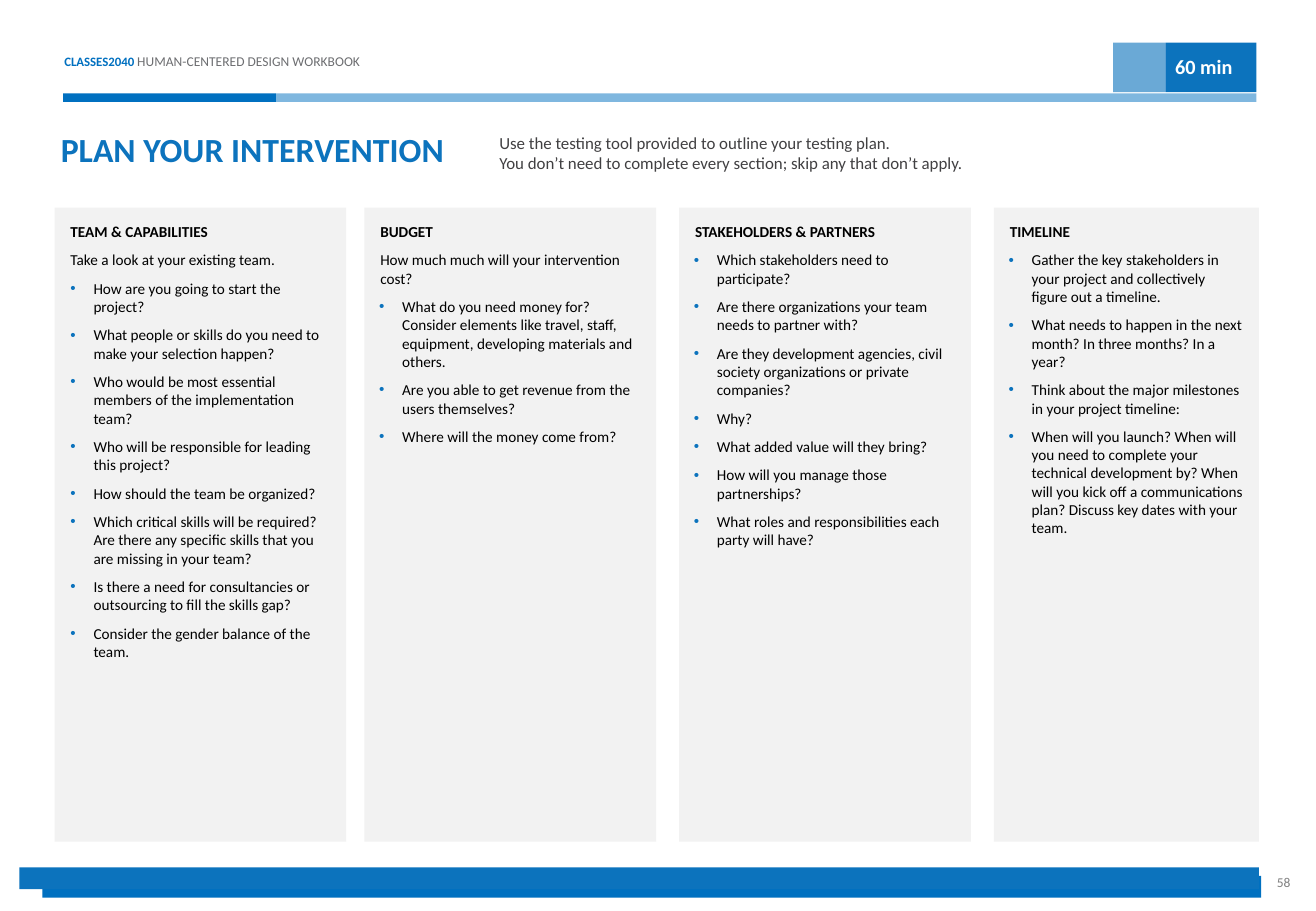
from dataclasses import dataclass

from lxml import etree
from pptx import Presentation
from pptx.dml.color import RGBColor
from pptx.enum.shapes import MSO_SHAPE
from pptx.enum.text import MSO_ANCHOR, PP_ALIGN
from pptx.oxml.ns import qn
from pptx.util import Emu, Pt

RECTANGLE = MSO_SHAPE.RECTANGLE
TOP, MIDDLE = MSO_ANCHOR.TOP, MSO_ANCHOR.MIDDLE
LEFT, RIGHT = PP_ALIGN.LEFT, PP_ALIGN.RIGHT
EMU_PER_PX = 9144

COLUMN_TOP, COLUMN_HEIGHT, COLUMN_INSET = 171, 522, 12


@dataclass(frozen=True)
class Theme:
    font: str = "Calibri"
    rule_blue: str = "0070C0"
    blue: str = "0C73BD"
    panel: str = "F2F2F2"
    black: str = "000000"
    white: str = "FFFFFF"
    intro_gray: str = "414042"
    header_gray: str = "6D6E71"
    page_gray: str = "808080"
    title_size: float = 20
    badge_size: float = 12
    intro_size: float = 10
    body_size: float = 9
    header_size: float = 8
    brand_size: float = 7.6
    paragraph_gap: float = 6


@dataclass(frozen=True)
class Column:
    left: int
    width: int
    heading: str
    questions: tuple
    lead: str = ""
    indent: int = 19


THEME = Theme()

COLUMNS = (
    Column(45, 240, "TEAM & CAPABILITIES", (
        "How are you going to start the project?",
        "What people or skills do you need to make your selection happen?",
        "Who would be most essential members of the implementation team?",
        "Who will be responsible for leading this project?",
        "How should the team be organized?",
        "Which critical skills will be required? Are there any specific skills "
        "that you are missing in your team?",
        "Is there a need for consultancies or outsourcing to fill the skills gap?",
        "Consider the gender balance of the team.",
    ), lead="Take a look at your existing team.", indent=20),
    Column(300, 240, "BUDGET", (
        "What do you need money for? Consider elements like travel, staff, "
        "equipment, developing materials and others.",
        "Are you able to get revenue from the users themselves?",
        "Where will the money come from?",
    ), lead="How much much will your intervention cost?"),
    Column(559, 240, "STAKEHOLDERS & PARTNERS", (
        "Which stakeholders need to participate?",
        "Are there organizations your team needs to partner with?",
        "Are they development agencies, civil society organizations or private companies?",
        "Why?",
        "What added value will they bring?",
        "How will you manage those partnerships?",
        "What roles and responsibilities each party will have?",
    )),
    Column(818, 218, "TIMELINE", (
        "Gather the key stakeholders in your project and collectively figure out a timeline.",
        "What needs to happen in the next month? In three months? In a year?",
        "Think about the major milestones in your project timeline:",
        "When will you launch? When will you need to complete your technical "
        "development by? When will you kick off a communications plan? "
        "Discuss key dates with your team.",
    )),
)


def px(length):
    return Emu(length * EMU_PER_PX)


def style_font(font, size, color, bold=False):
    font.name = THEME.font
    font.size = Pt(size)
    font.bold = bold
    font.color.rgb = RGBColor.from_string(color)


def set_frame(frame, insets, anchor=TOP):
    """Wrap the text and set its insets, given as left, top, right, bottom."""
    frame.word_wrap = True
    frame.vertical_anchor = anchor
    (frame.margin_left, frame.margin_top,
     frame.margin_right, frame.margin_bottom) = map(px, insets)


def add_block(slide, left, top, width, height, color, opacity=100):
    block = slide.shapes.add_shape(RECTANGLE, *map(px, (left, top, width, height)))
    block.shadow.inherit = False
    block.line.fill.background()
    block.fill.solid()
    block.fill.fore_color.rgb = RGBColor.from_string(color)
    if opacity < 100:
        rgb = block.fill._xPr.find(qn("a:solidFill"))[0]
        etree.SubElement(rgb, qn("a:alpha"), val=str(opacity * 1000))
    return block


def add_label(slide, left, top, width, height, insets=(0, 0, 0, 0), anchor=TOP):
    """Add a text box and return its first paragraph."""
    frame = slide.shapes.add_textbox(*map(px, (left, top, width, height))).text_frame
    set_frame(frame, insets, anchor)
    return frame.paragraphs[0]


def set_indent(paragraph, margin, first_line=0):
    properties = paragraph._p.get_or_add_pPr()
    properties.set("marL", str(px(margin)))
    properties.set("indent", str(px(first_line)))
    return properties


def add_bullet(paragraph, indent):
    properties = set_indent(paragraph, indent, -19)
    bullet_color = etree.SubElement(properties, qn("a:buClr"))
    etree.SubElement(bullet_color, qn("a:srgbClr"), val=THEME.blue)
    etree.SubElement(properties, qn("a:buFont"), typeface="Arial")
    etree.SubElement(properties, qn("a:buChar"), char="•")


def add_column(slide, column):
    panel = add_block(slide, column.left, COLUMN_TOP, column.width, COLUMN_HEIGHT, THEME.panel)
    frame = panel.text_frame
    set_frame(frame, (COLUMN_INSET,) * 4)
    plain = [column.heading] + ([column.lead] if column.lead else [])
    for index, wording in enumerate([*plain, *column.questions]):
        paragraph = frame.add_paragraph() if index else frame.paragraphs[0]
        paragraph.text = wording
        paragraph.alignment = LEFT
        paragraph.space_after = Pt(THEME.paragraph_gap)
        if index < len(plain):
            set_indent(paragraph, 1)
        else:
            add_bullet(paragraph, column.indent)
        style_font(paragraph.font, THEME.body_size, THEME.black, bold=index == 0)


def add_header(slide):
    add_block(slide, 52, 77, 175, 7, THEME.rule_blue)
    add_block(slide, 227, 77, 807, 7, THEME.rule_blue, opacity=50)
    header = add_label(slide, 51, 42, 303, 15, (0, 2, 0, 0))
    set_indent(header, 2)
    for wording, size, color, bold in (
        ("CLASSES2040 ", THEME.brand_size, THEME.rule_blue, True),
        ("HUMAN-CENTERED DESIGN WORKBOOK", THEME.header_size, THEME.header_gray, False),
    ):
        run = header.add_run()
        run.text = wording
        style_font(run.font, size, color, bold)


def add_duration(slide):
    badge = add_block(slide, 959, 35, 75, 41, THEME.blue)
    set_frame(badge.text_frame, (0, 10, 0, 0))
    duration = badge.text_frame.paragraphs[0]
    duration.text = "60 min"
    duration.alignment = LEFT
    set_indent(duration, 8)
    style_font(duration.font, THEME.badge_size, THEME.white, bold=True)
    add_block(slide, 916, 35, 43, 41, THEME.blue, opacity=61)


def add_title(slide):
    title = add_label(slide, 50, 106, 362, 34)
    title.text = "PLAN YOUR INTERVENTION"
    style_font(title.font, THEME.title_size, THEME.blue, bold=True)
    intro = add_label(slide, 411, 99, 622, 44, (0, 10, 0, 0))
    intro.add_run().text = "Use the testing tool provided to outline your testing plan."
    intro.add_line_break()
    intro.add_run().text = "You don’t need to complete every section; skip any that don’t apply."
    style_font(intro.font, THEME.intro_size, THEME.intro_gray)


def add_footer(slide):
    add_block(slide, 35, 721, 1003, 18, THEME.rule_blue)
    add_block(slide, 16, 714, 1020, 18, THEME.blue)
    page = add_label(slide, 1031, 714, 41, 25, (10, 5, 10, 5), MIDDLE)
    page.text = "58"
    page.alignment = RIGHT
    style_font(page.font, THEME.header_size, THEME.page_gray)


def main():
    deck = Presentation()
    deck.slide_width, deck.slide_height = px(1083), px(750)
    slide = deck.slides.add_slide(deck.slide_layouts[6])
    add_header(slide)
    add_duration(slide)
    add_title(slide)
    for column in COLUMNS:
        add_column(slide, column)
    add_footer(slide)
    deck.save("out.pptx")


if __name__ == "__main__":
    main()
